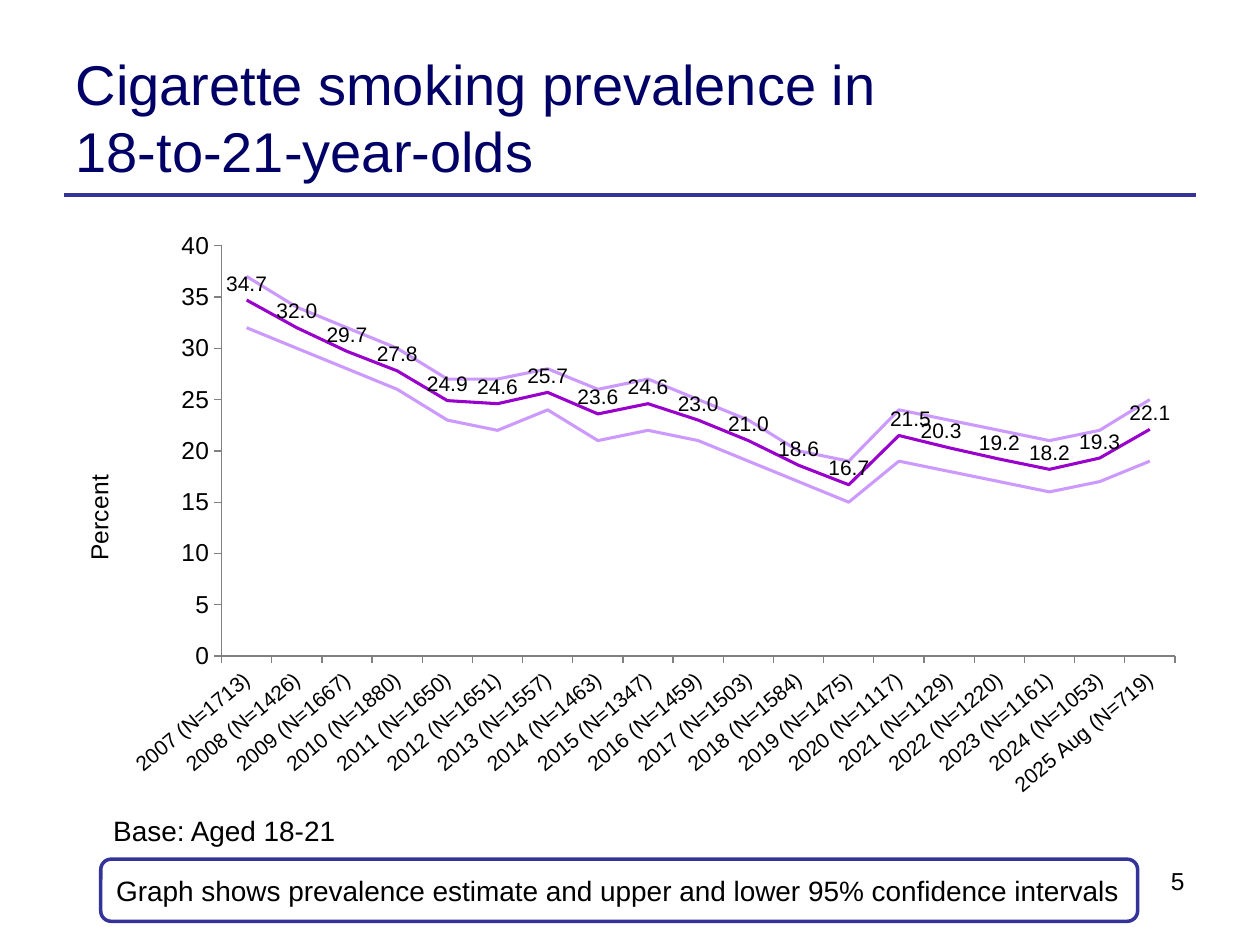
import pptx
import pptx.util
import pptx.chart.data
import pptx.dml.color
import pptx.enum.chart
import pptx.enum.shapes
import pptx.enum.text
import pptx.oxml
import pptx.oxml.ns

Pt = pptx.util.Pt
qn = pptx.oxml.ns.qn
ALIGN = pptx.enum.text.PP_ALIGN
ANCHOR = pptx.enum.text.MSO_ANCHOR
FONT = "Arial"
NAVY, BLUE, BLACK, WHITE, GREY = "000066", "333399", "000000", "FFFFFF", "808080"
PURPLE, LILAC = "9900CC", "CC99FF"

SAMPLES = [1713, 1426, 1667, 1880, 1650, 1651, 1557, 1463, 1347, 1459,
           1503, 1584, 1475, 1117, 1129, 1220, 1161, 1053]
CATEGORIES = [f"{2007 + i + (i > 2)} (N={n})" for i, n in enumerate(SAMPLES)]
CATEGORIES = [f"{year} (N={n})" for year, n in zip(range(2007, 2025), SAMPLES)]
CATEGORIES.append("2025 Aug (N=719)")
SERIES = [
    ("Series 1", PURPLE, [34.7, 32, 29.7, 27.8, 24.9, 24.6, 25.7, 23.6, 24.6, 23,
                          21, 18.6, 16.7, 21.5, 20.3, 19.2, 18.2, 19.3, 22.1]),
    ("Series 2", LILAC, [37, 34, 32, 30, 27, 27, 28, 26, 27, 25,
                         23, 20, 19, 24, 23, 22, 21, 22, 25]),
    ("Series 3", LILAC, [32, 30, 28, 26, 23, 22, 24, 21, 22, 21,
                         19, 17, 15, 19, 18, 17, 16, 17, 19]),
]


def rgb(color):
    return pptx.dml.color.RGBColor.from_string(color)


def set_font(font, size, color=BLACK):
    font.name, font.size, font.bold = FONT, Pt(size), False
    font.color.rgb = rgb(color)


def write(tf, text, size, color=BLACK, align=ALIGN.LEFT, anchor=ANCHOR.TOP, wrap=True):
    tf.text = text
    tf.word_wrap, tf.vertical_anchor = wrap, anchor
    p = tf.paragraphs[0]
    p.alignment = align
    for r in p.runs:
        set_font(r.font, size, color)


def set_layout(parent, index, **values):
    """Place a chart part by fractions of the chart."""
    for old in parent.findall(qn("c:layout")):
        parent.remove(old)
    parts = "".join(f'<c:{tag} val="{val}"/>' for tag, val in values.items())
    parent.insert(index, pptx.oxml.parse_xml(
        f'<c:layout {pptx.oxml.ns.nsdecls("c")}><c:manualLayout>{parts}'
        '</c:manualLayout></c:layout>'))


def add_header(s, x, y, w, h):
    # Title
    title = s.shapes.title
    title.left, title.top, title.width, title.height = Pt(x), Pt(y), Pt(w), Pt(h)
    write(title.text_frame, "Cigarette smoking prevalence in \v18-to-21-year-olds",
          32, NAVY, anchor=ANCHOR.MIDDLE)
    # Rule below the title
    rule = s.shapes.add_connector(pptx.enum.shapes.MSO_CONNECTOR.STRAIGHT,
                                  Pt(x + 0.7), Pt(y + h), Pt(x + 647.3), Pt(y + h))
    rule.line.color.rgb, rule.line.width = rgb(BLUE), Pt(2.25)
    rule._element.spPr.append(pptx.oxml.parse_xml(
        f'<a:effectLst {pptx.oxml.ns.nsdecls("a")}/>'))


def add_prevalence_chart(s, x, y, w, h):
    data = pptx.chart.data.CategoryChartData()
    data.categories = CATEGORIES
    for name, _, values in SERIES:
        data.add_series(name, values)
    chart = s.shapes.add_chart(pptx.enum.chart.XL_CHART_TYPE.LINE,
                               Pt(x), Pt(y), Pt(w), Pt(h), data).chart
    chart.has_legend = chart.has_title = False
    set_font(chart.font, 18)
    chart.plots[0].vary_by_categories = False
    set_layout(chart._chartSpace.chart.plotArea, 0, layoutTarget="inner",
               xMode="edge", yMode="edge", x=0.154, y=0.043, w=0.827, h=0.699)

    # Axes
    for axis, size in ((chart.category_axis, 12), (chart.value_axis, 14)):
        axis.has_major_gridlines = False
        axis.major_tick_mark = pptx.enum.chart.XL_TICK_MARK.OUTSIDE
        axis.format.line.color.rgb = rgb(GREY)
        axis.format.line.width = Pt(0.75)
        set_font(axis.tick_labels.font, size)
    body = chart.category_axis._element.find(qn("c:txPr")).find(qn("a:bodyPr"))
    body.set("rot", str(-40 * 60000))
    body.set("vert", "horz")
    value_axis = chart.value_axis
    value_axis.minimum_scale, value_axis.maximum_scale = 0, 40
    value_axis.major_unit = 5
    write(value_axis.axis_title.text_frame, "Percent", 14, align=ALIGN.CENTER)
    set_layout(value_axis.axis_title._element, 1,
               xMode="edge", yMode="edge", x=0.03, y=0.426)

    # Estimate and confidence limits
    for series, (_, color, _) in zip(chart.plots[0].series, SERIES):
        series.smooth = False
        series.format.line.color.rgb = rgb(color)
        series.format.line.width = Pt(1.75)

    # Value labels, two of them nudged apart
    estimate = chart.plots[0].series[0]
    above = pptx.enum.chart.XL_LABEL_POSITION.ABOVE
    labels = estimate.data_labels
    labels.show_value, labels.position = True, above
    labels.number_format, labels.number_format_is_linked = "#,##0.0", False
    set_font(labels.font, 12)
    for index, shift in ((13, 0.01), (14, -0.007)):
        label = estimate.points[index].data_label
        label.position = above
        set_font(label.font, 12)
        set_layout(labels._element.xpath(f'c:dLbl[c:idx/@val="{index}"]')[0], 1,
                   x=shift, y=0)


def add_footer(s, x, y, w, h):
    # Base of the sample
    base = s.shapes.add_textbox(Pt(x), Pt(y), Pt(142.5), Pt(26.6))
    write(base.text_frame, "Base: Aged 18-21", 16, wrap=False)
    # Page number
    number = s.shapes.add_textbox(Pt(x + w - 199.5), Pt(y + 30), Pt(199.5), Pt(37.5))
    write(number.text_frame, "5", 14, align=ALIGN.RIGHT)
    # Note on the lines
    note = s.shapes.add_shape(pptx.enum.shapes.MSO_SHAPE.ROUNDED_RECTANGLE,
                              Pt(x), Pt(y + 29.5), Pt(592.5), Pt(h - 29.5))
    note.shadow.inherit = False
    note.fill.solid()
    note.fill.fore_color.rgb = rgb(WHITE)
    note.line.color.rgb, note.line.width = rgb(BLUE), Pt(2)
    write(note.text_frame,
          "Graph shows prevalence estimate and upper and lower 95% confidence intervals",
          16, anchor=ANCHOR.MIDDLE)


def main():
    prs = pptx.Presentation()
    prs.slide_width, prs.slide_height = Pt(720), Pt(540)
    s = prs.slides.add_slide(prs.slide_layouts[5])
    add_header(s, 36, 21.6, 568, 90)
    add_prevalence_chart(s, 25.2, 126, 658.8, 335.5)
    add_footer(s, 57.6, 461.5, 626.4, 65)
    prs.save("out.pptx")


if __name__ == "__main__":
    main()
